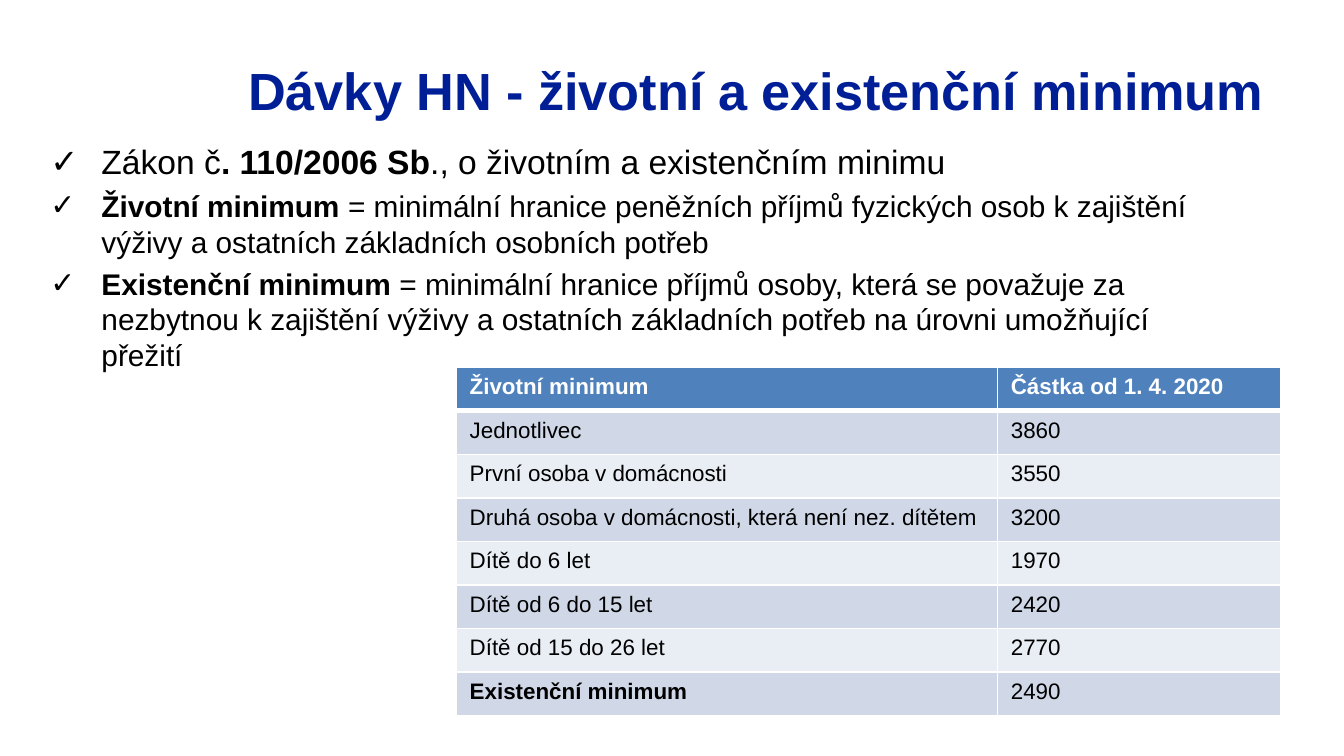
from dataclasses import dataclass

from lxml.etree import SubElement
from pptx import Presentation
from pptx.dml.color import RGBColor
from pptx.enum.text import MSO_ANCHOR, MSO_AUTO_SIZE, PP_ALIGN
from pptx.oxml import parse_xml
from pptx.oxml.ns import nsdecls, qn
from pptx.util import Inches, Pt


@dataclass(frozen=True)
class Theme:
    font: str = "Arial"
    heading: str = "001E96"
    text: str = "000000"
    white: str = "FFFFFF"
    header_fill: str = "4F81BD"
    bands: tuple = ("D0D8E8", "E9EDF4")
    title_size: float = 28
    lead_size: float = 18
    body_size: float = 16
    table_size: float = 12
    thin: float = 1
    thick: float = 3


class SlideBuilder:
    GRID = 100  # columns and rows across the slide

    def __init__(self, deck, theme):
        self.theme = theme
        self.column = deck.slide_width / self.GRID
        self.row = deck.slide_height / self.GRID
        self.slide = deck.slides.add_slide(deck.slide_layouts[1])

    def box(self, left, top, width, height):
        """Turn grid columns and rows into lengths."""
        return (round(left * self.column), round(top * self.row),
                round(width * self.column), round(height * self.row))

    def place(self, shape, area):
        shape.left, shape.top, shape.width, shape.height = self.box(*area)

    def style(self, run, size, color, bold=False):
        font = run.font
        font.name, font.size, font.bold = self.theme.font, Pt(size), bold
        font.color.rgb = RGBColor.from_string(color)

    def title(self, text, area):
        heading = self.slide.shapes.title
        self.place(heading, area)
        frame = heading.text_frame
        frame.text = text
        frame.vertical_anchor = MSO_ANCHOR.MIDDLE
        frame.auto_size = MSO_AUTO_SIZE.NONE
        paragraph = frame.paragraphs[0]
        paragraph.alignment = PP_ALIGN.RIGHT
        paragraph.line_spacing = 0.9
        self.style(paragraph.runs[0], self.theme.title_size, self.theme.heading, True)

    def checklist(self, items, area):
        """Each item is a size and its (text, bold) parts."""
        body = self.slide.placeholders[1]
        self.place(body, area)
        frame = body.text_frame
        frame.auto_size = MSO_AUTO_SIZE.NONE
        for index, (size, parts) in enumerate(items):
            paragraph = frame.add_paragraph() if index else frame.paragraphs[0]
            for text, bold in parts:
                run = paragraph.add_run()
                run.text = text
                self.style(run, size, self.theme.text, bold)
            self.check_bullet(paragraph)

    def check_bullet(self, paragraph):
        properties = paragraph._p.get_or_add_pPr()
        indent = Inches(0.38)
        properties.set("marL", str(indent))
        properties.set("indent", str(-indent))
        SubElement(properties, qn("a:buFont"), typeface=self.theme.font)
        SubElement(properties, qn("a:buChar"), char="✓")

    def table(self, rows, area, column_weights, bold_rows):
        theme = self.theme
        left, top, width, height = self.box(*area)
        grid = self.slide.shapes.add_table(
            len(rows), len(column_weights), left, top, width, height).table
        for column, weight in zip(grid.columns, column_weights):
            column.width = round(width * weight / sum(column_weights))
        for r, row in enumerate(rows):
            fill = theme.bands[(r - 1) % 2] if r else theme.header_fill
            color = theme.text if r else theme.white
            for c, text in enumerate(row):
                cell = grid.cell(r, c)
                cell.text = text
                cell.fill.solid()
                cell.fill.fore_color.rgb = RGBColor.from_string(fill)
                bold = r == 0 or (r in bold_rows and c == 0)
                self.style(cell.text_frame.paragraphs[0].runs[0],
                           theme.table_size, color, bold)
                self.borders(cell,
                             top=theme.thick if r == 1 else theme.thin,
                             bottom=theme.thick if r == 0 else theme.thin)

    def borders(self, cell, top, bottom):
        thin = self.theme.thin
        properties = cell._tc.get_or_add_tcPr()
        edges = (("lnL", thin), ("lnR", thin), ("lnT", top), ("lnB", bottom))
        for position, (edge, weight) in enumerate(edges):
            properties.insert(position, parse_xml(
                f'<a:{edge} {nsdecls("a")} w="{Pt(weight)}"><a:solidFill>'
                f'<a:srgbClr val="{self.theme.white}"/></a:solidFill></a:{edge}>'))


def main():
    deck = Presentation()
    deck.slide_width = Inches(10)
    deck.slide_height = deck.slide_width * 9 // 16
    theme = Theme()
    page = SlideBuilder(deck, theme)

    # Heading
    page.title("Dávky HN - životní a existenční minimum", (5, 4, 90, 16.7))

    # Law and definitions
    page.checklist([
        (theme.lead_size, [
            ("Zákon č", False), (". 110/2006 Sb", True),
            ("., o životním a existenčním minimu", False)]),
        (theme.body_size, [
            ("Životní minimum ", True),
            ("= minimální hranice peněžních příjmů fyzických osob k zajištění "
             "výživy a ostatních základních osobních potřeb", False)]),
        (theme.body_size, [
            ("Existenční minimum ", True),
            ("= minimální hranice příjmů osoby, která se považuje za nezbytnou "
             "k zajištění výživy a ostatních základních potřeb na úrovni "
             "umožňující přežití", False)]),
    ], (2.75, 17.8, 87.1, 70))

    # Amounts
    amounts = [
        ("Životní minimum", "Částka od 1. 4. 2020"),
        ("Jednotlivec", "3860"),
        ("První osoba v domácnosti", "3550"),
        ("Druhá osoba v domácnosti, která není nez. dítětem", "3200"),
        ("Dítě do 6 let", "1970"),
        ("Dítě od 6 do 15 let", "2420"),
        ("Dítě od 15 do 26 let", "2770"),
        ("Existenční minimum", "2490"),
    ]
    page.table(amounts, (33.95, 48.6, 61.35, 46.1), (4.03, 2.11),
               bold_rows={len(amounts) - 1})

    deck.save("out.pptx")


if __name__ == "__main__":
    main()
